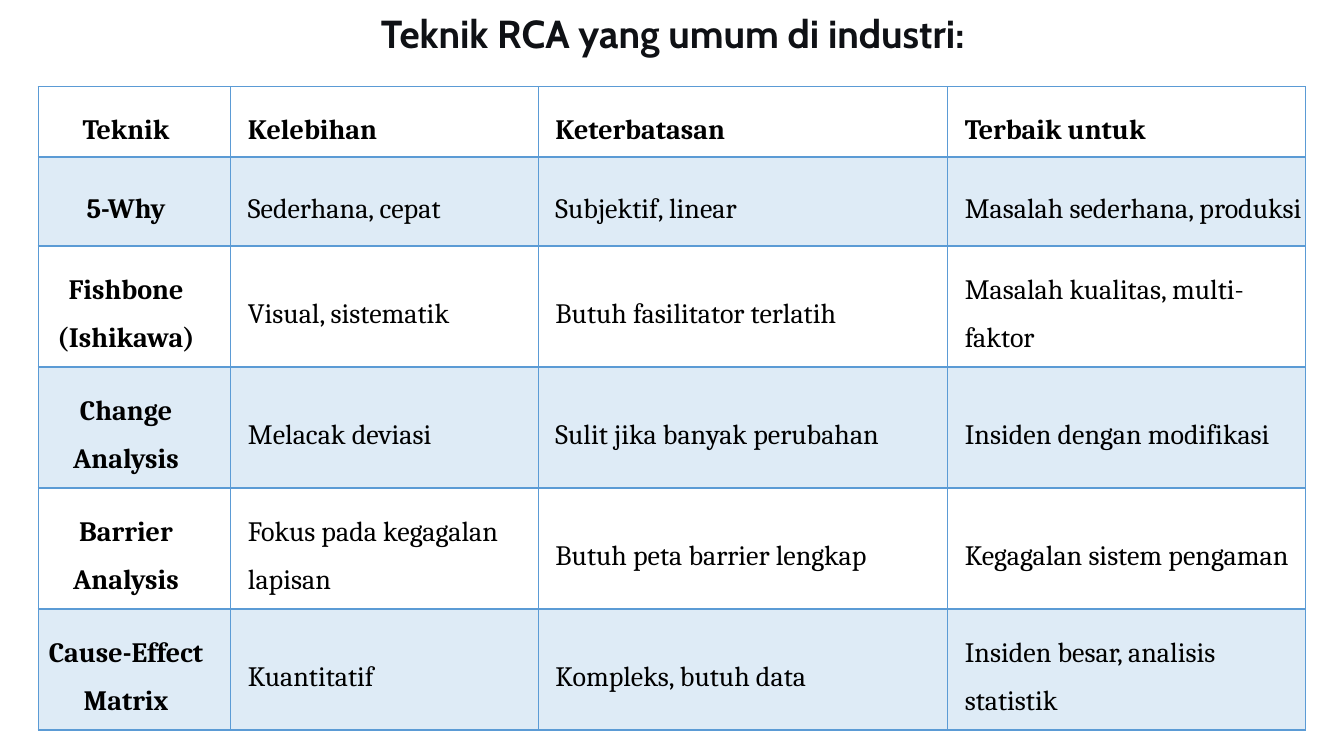
from pptx import Presentation
from pptx.dml.color import RGBColor
from pptx.enum.text import MSO_ANCHOR, PP_ALIGN
from pptx.oxml import parse_xml
from pptx.oxml.ns import nsdecls, qn
from pptx.util import Inches, Pt
from lxml.etree import SubElement

# Content
TITLE = "Teknik RCA yang umum di industri:"
ROWS = [
    ("Teknik", "Kelebihan", "Keterbatasan", "Terbaik untuk"),
    ("5-Why", "Sederhana, cepat", "Subjektif, linear", "Masalah sederhana, produksi"),
    ("Fishbone (Ishikawa)", "Visual, sistematik", "Butuh fasilitator terlatih",
     "Masalah kualitas, multi-faktor"),
    ("Change Analysis", "Melacak deviasi", "Sulit jika banyak perubahan",
     "Insiden dengan modifikasi"),
    ("Barrier Analysis", "Fokus pada kegagalan lapisan", "Butuh peta barrier lengkap",
     "Kegagalan sistem pengaman"),
    ("Cause-Effect Matrix", "Kuantitatif", "Kompleks, butuh data",
     "Insiden besar, analisis statistik"),
]
COL_WIDTHS = (1.91, 3.05, 4.06, 3.55)
ROW_HEIGHTS = (0.69, 0.88) + (1.17,) * 4
TABLE_LEFT, TABLE_TOP = 0.38, 0.86
PAD_X, PAD_Y = 0.17, 0.1

THEME = {
    "title_font": "Cabin", "title_size": 27.9, "title_color": "0F1115",
    "body_font": "Cambria", "body_size": 20, "body_color": "000000",
    "accent": "5B9BD5", "band_alpha": 20, "line": 1, "header_line": 2,
}


def add_run(p, text, role, bold):
    r = p.add_run()
    r.text = text
    r.font.name = THEME[f"{role}_font"]
    r.font.size = Pt(THEME[f"{role}_size"])
    r.font.color.rgb = RGBColor.from_string(THEME[f"{role}_color"])
    r.font.bold = bold


def add_border(cell, side, width):
    cell._tc.get_or_add_tcPr().append(parse_xml(
        f'<a:ln{side} {nsdecls("a")} w="{Pt(width)}"><a:solidFill>'
        f'<a:srgbClr val="{THEME["accent"]}"/></a:solidFill></a:ln{side}>'))


def fill_band(cell):
    cell.fill.solid()
    cell.fill.fore_color.rgb = RGBColor.from_string(THEME["accent"])
    color = cell._tc.tcPr.find(qn("a:solidFill")).find(qn("a:srgbClr"))
    SubElement(color, qn("a:alpha")).set("val", str(THEME["band_alpha"] * 1000))


def build_cell(cell, row, col, text):
    last_col = len(COL_WIDTHS) - 1
    cell.vertical_anchor = MSO_ANCHOR.MIDDLE
    cell.margin_top = cell.margin_bottom = Inches(PAD_Y)
    cell.margin_left = Inches(0 if col == 0 else PAD_X)
    cell.margin_right = Inches(0 if row and col == last_col else PAD_X)

    # Borders, heavier under the header, then the band fill
    for side in "LRTB":
        under_header = (row, side) in ((0, "B"), (1, "T"))
        add_border(cell, side, THEME["header_line" if under_header else "line"])
    if row % 2:
        fill_band(cell)
    else:
        cell.fill.background()

    p = cell.text_frame.paragraphs[0]
    p.alignment = PP_ALIGN.CENTER if col == 0 else PP_ALIGN.LEFT
    p.line_spacing = 1.5
    p.space_after = Pt(8)
    add_run(p, text, "body", row == 0 or col == 0)


def main():
    prs = Presentation()
    prs.slide_width, prs.slide_height = Inches(13.33), Inches(7.5)
    s = prs.slides.add_slide(prs.slide_layouts[6])

    # Title
    tf = s.shapes.add_textbox(Inches(0.92), Inches(0.06), Inches(11.5), Inches(0.6)).text_frame
    tf.word_wrap = True
    tf.vertical_anchor = MSO_ANCHOR.MIDDLE
    p = tf.paragraphs[0]
    p.alignment = PP_ALIGN.CENTER
    p.line_spacing = 0.9
    add_run(p, TITLE, "title", True)

    # Technique table
    table = s.shapes.add_table(
        len(ROWS), len(COL_WIDTHS), Inches(TABLE_LEFT), Inches(TABLE_TOP),
        Inches(sum(COL_WIDTHS)), Inches(sum(ROW_HEIGHTS))).table
    table.first_row = table.horz_banding = False
    for column, width in zip(table.columns, COL_WIDTHS):
        column.width = Inches(width)
    for row, (texts, height) in enumerate(zip(ROWS, ROW_HEIGHTS)):
        table.rows[row].height = Inches(height)
        for col, text in enumerate(texts):
            build_cell(table.cell(row, col), row, col, text)

    prs.save("out.pptx")


if __name__ == "__main__":
    main()
